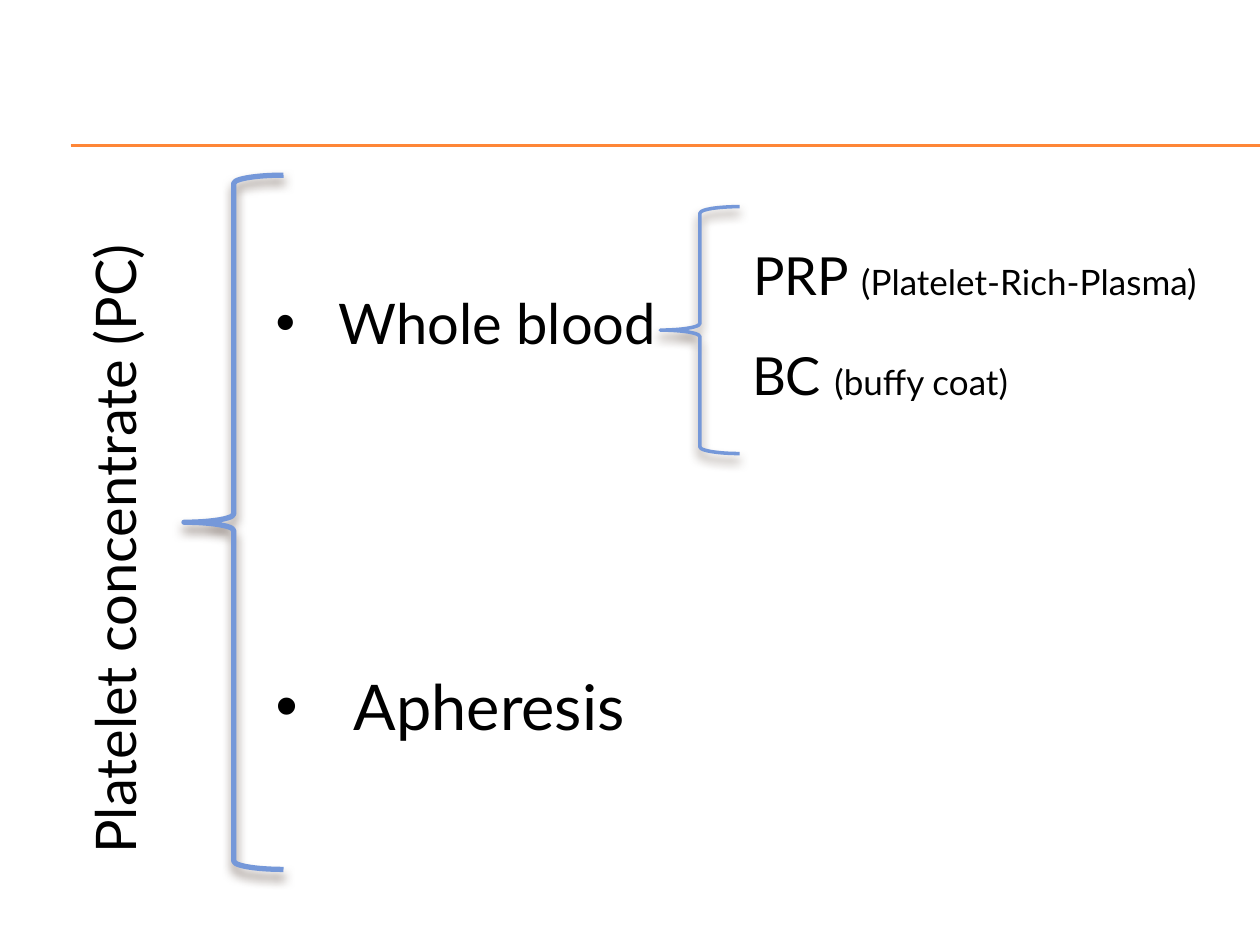
"""Build a slide that sorts platelet concentrates by source with nested braces."""
from lxml import etree
from pptx import Presentation
from pptx import util as u
from pptx.dml import color
from pptx.enum import shapes, text
from pptx.oxml import ns

THEME = {
    "font": "Lato", "ink": "000000", "rule": "FE8637", "brace": "7598D9",
    "shadow": "4E3B30", "rule_width": 0.75,
    "large": 36, "main": 32, "branch": 30, "detail": 20,
}
RULE_LEFT, RULE_RIGHT, RULE_HEIGHTS = 0.56, 10, (1.15, 1.16)
BRACES = [  # left, top, width, height, line width
    (1.46, 1.39, 0.79, 5.51, 3),
    (5.24, 1.64, 0.63, 1.96, 2),
]
TITLE = ("Platelet concentrate (PC) ", (0.59, 1.7, 0.74, 5.2))
SOURCES = [  # wording, place, type size, hanging indent
    ("Whole blood", (2.09, 2.24, 3.23, 0.64), "main", 0.5),
    ("Apheresis", (2.09, 5.25, 3.23, 0.71), "large", 0.62),
]
METHODS = [
    ("PRP ", "(Platelet-Rich-Plasma)", (5.88, 1.88, 3.78, 0.61)),
    ("BC ", "(buffy coat)", (5.87, 2.67, 3.41, 0.61)),
]


def rgb(name):
    """Return a theme colour."""
    return color.RGBColor.from_string(THEME[name])


def add_child(parent, tag, **attributes):
    """Append a DrawingML element and return it."""
    child = etree.SubElement(parent, ns.qn(tag))
    for key, value in attributes.items():
        child.set(key, str(value))
    return child


def add_rule(page, top):
    """Draw one horizontal rule without a shadow."""
    rule = page.shapes.add_connector(
        shapes.MSO_CONNECTOR.STRAIGHT, u.Inches(RULE_LEFT), u.Inches(top),
        u.Inches(RULE_RIGHT), u.Inches(top))
    rule.line.color.rgb = rgb("rule")
    rule.line.width = u.Pt(THEME["rule_width"])
    add_child(rule._element.spPr, "a:effectLst")


def add_brace(page, left, top, width, height, weight):
    """Draw a left brace with a soft shadow below it."""
    brace = page.shapes.add_shape(
        shapes.MSO_SHAPE.LEFT_BRACE, *map(u.Inches, (left, top, width, height)))
    brace.fill.background()
    brace.line.color.rgb = rgb("brace")
    brace.line.width = u.Pt(weight)
    brace.shadow.inherit = False
    effects = brace._element.spPr.find(ns.qn("a:effectLst"))
    shadow = add_child(effects, "a:outerShdw", blurRad=u.Pt(6), dist=u.Pt(4),
                       dir=90 * 60000, rotWithShape=0)
    tint = add_child(shadow, "a:srgbClr", val=THEME["shadow"])
    add_child(tint, "a:alpha", val=60000)


def add_label(page, place, spans):
    """Add a text box of (wording, size) spans and return its text frame."""
    box = page.shapes.add_textbox(*map(u.Inches, place))
    frame = box.text_frame
    frame.word_wrap = True
    frame.auto_size = text.MSO_AUTO_SIZE.SHAPE_TO_FIT_TEXT
    for wording, size in spans:
        span = frame.paragraphs[0].add_run()
        span.text = wording
        span.font.name = THEME["font"]
        span.font.size = u.Pt(THEME[size])
        span.font.color.rgb = rgb("ink")
    return frame


def add_bullet(para, indent):
    """Give a paragraph a bullet with a hanging indent."""
    properties = para._p.get_or_add_pPr()
    properties.set("marL", str(u.Inches(indent)))
    properties.set("indent", str(-u.Inches(indent)))
    add_child(properties, "a:buFont", typeface="Arial")
    add_child(properties, "a:buChar", char="•")


def main():
    """Assemble and save the deck."""
    deck = Presentation()
    deck.slide_width, deck.slide_height = u.Inches(10), u.Inches(7.5)
    page = deck.slides.add_slide(deck.slide_layouts[6])
    for top in RULE_HEIGHTS:
        add_rule(page, top)
    for brace in BRACES:
        add_brace(page, *brace)

    wording, place = TITLE
    frame = add_label(page, place, [(wording, "main")])
    frame._txBody.bodyPr.set("vert", "vert270")
    frame.paragraphs[0].alignment = text.PP_ALIGN.CENTER

    for wording, place, size, indent in SOURCES:
        frame = add_label(page, place, [(wording, size)])
        add_bullet(frame.paragraphs[0], indent)
    for name, detail, place in METHODS:
        add_label(page, place, [(name, "branch"), (detail, "detail")])
    deck.save("out.pptx")


if __name__ == "__main__":
    main()
